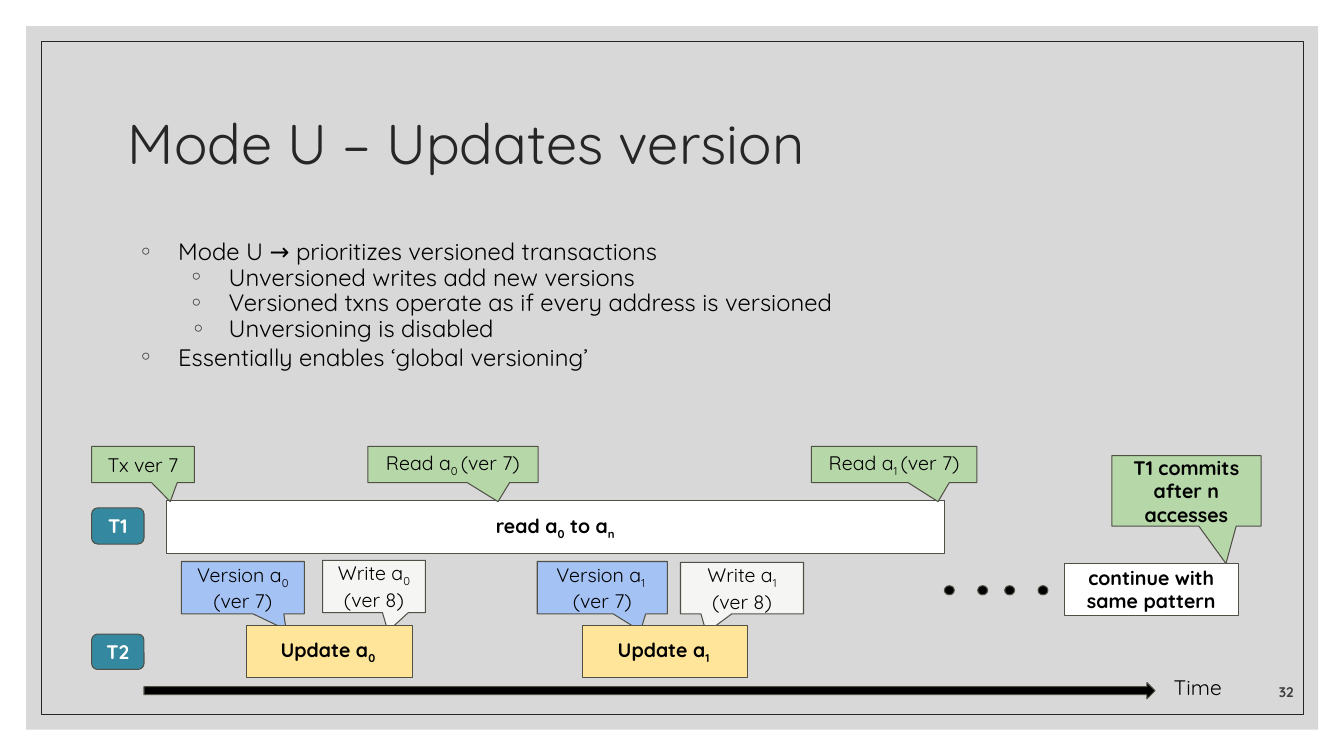
"""Build the Mode U slide: a versioned transaction timeline under a short list."""
from dataclasses import dataclass
from typing import Optional

from lxml.etree import SubElement
from pptx import Presentation
from pptx.dml.color import RGBColor
from pptx.enum.shapes import MSO_SHAPE
from pptx.enum.text import MSO_ANCHOR, MSO_AUTO_SIZE, PP_ALIGN
from pptx.oxml.ns import qn
from pptx.util import Cm, Pt

FONT = "Quicksand"
INK, OUTLINE, BLACK, WHITE = "262626", "505046", "000000", "FFFFFF"
GREEN, BLUE, PALE, YELLOW, TEAL = "B6D7A8", "A4C2F4", "F5F6F4", "FFE599", "3488A0"
RECT, CALLOUT, ROUNDED = MSO_SHAPE.RECTANGLE, MSO_SHAPE.RECTANGULAR_CALLOUT, MSO_SHAPE.ROUNDED_RECTANGLE
DOWN_RIGHT = (0.265, 1.029)


@dataclass(frozen=True)
class Block:
    kind: MSO_SHAPE
    box: tuple[float, float, float, float]
    fill: Optional[str] = None
    text: str = ""
    bold: bool = False
    color: str = BLACK
    adjust: tuple[float, ...] = ()
    line: Optional[str] = OUTLINE


@dataclass(frozen=True)
class Point:
    text: str
    level: int = 0
    hanging: float = 0.99
    before: float = 0


FRAME = [
    Block(RECT, (0.66, 0.66, 32.56, 17.73), "BFBFBF", line=None),
    Block(RECT, (1.04, 1.04, 31.8, 16.97), line=INK),
]
POINTS = [
    Point("Mode U → prioritizes versioned transactions", before=9),
    Point("Unversioned writes add new versions", 1),
    Point("Versioned txns operate as if every address is versioned", 1),
    Point("Unversioning is disabled", 1, 0.94),
    Point("Essentially enables ‘global versioning’"),
]
TIMELINE = [
    Block(RECT, (4.19, 12.62, 19.61, 1.32), WHITE, "read a~0~ to a~n~", True),
    Block(MSO_SHAPE.RIGHT_ARROW, (3.63, 17.2, 25.48, 0.41), BLACK, adjust=(0.5, 0.5)),
    Block(ROUNDED, (2.31, 12.8, 1.32, 0.91), TEAL, "T1", True, WHITE),
    Block(ROUNDED, (2.31, 15.98, 1.32, 0.89), TEAL, "T2", True, WHITE),
    Block(CALLOUT, (9.27, 11.25, 4.29, 0.91), GREEN, "Read a~0 ~(ver 7)", adjust=DOWN_RIGHT),
    Block(CALLOUT, (8.13, 14.12, 2.59, 1.32), PALE, "Write a~0 ~(ver 8)", adjust=(0.136, 0.855)),
    Block(CALLOUT, (17.15, 14.17, 3.1, 1.3), PALE, "Write a~1~\n(ver 8)", adjust=(-0.29, 0.865)),
    Block(CALLOUT, (20.45, 11.25, 4.17, 0.91), GREEN, "Read a~1 ~(ver 7)", adjust=DOWN_RIGHT),
    Block(CALLOUT, (13.54, 14.15, 3.28, 1.32), BLUE, "Version a~1 ~\n(ver 7)", adjust=(0.293, 0.823)),
    Block(CALLOUT, (4.57, 14.15, 3.1, 1.32), BLUE, "Version a~0 ~(ver 7)", adjust=(0.352, 0.801)),
    *(Block(MSO_SHAPE.OVAL, (left, 14.76, 0.25, 0.23), BLACK) for left in (23.8, 24.64, 25.32, 26.16)),
    Block(RECT, (26.82, 14.2, 4.39, 1.3), WHITE, "continue with same pattern", True),
    Block(CALLOUT, (28.02, 11.48, 3.76, 1.78), GREEN, "T1 commits after n accesses", True, adjust=DOWN_RIGHT),
    Block(RECT, (6.22, 15.77, 4.17, 1.3), YELLOW, "Update a~0 ~", True),
    Block(RECT, (14.68, 15.77, 4.17, 1.3), YELLOW, "Update a~1 ~", True),
    Block(CALLOUT, (2.31, 11.25, 2.59, 0.91), GREEN, "Tx ver 7", adjust=DOWN_RIGHT),
]


def rgb(value: str) -> RGBColor:
    """Turn a hex string into a colour."""
    return RGBColor.from_string(value)


def place(shape, box: tuple[float, float, float, float]) -> None:
    """Move and size a shape, in centimetres."""
    shape.left, shape.top, shape.width, shape.height = map(Cm, box)


def write(shape, text: str, *, size: float = 14, color: str = BLACK, bold: bool = False,
          align=PP_ALIGN.CENTER, anchor=MSO_ANCHOR.MIDDLE, inset: float = 0.25,
          spacing: Optional[float] = None) -> None:
    """Write formatted text, one paragraph a line, with subscripts between tildes."""
    frame = shape.text_frame
    frame.word_wrap = True
    frame.auto_size = MSO_AUTO_SIZE.NONE
    frame.vertical_anchor = anchor
    frame.margin_left = frame.margin_right = Cm(0.25)
    frame.margin_top = frame.margin_bottom = Cm(inset)
    for index, content in enumerate(text.split("\n")):
        paragraph = frame.add_paragraph() if index else frame.paragraphs[0]
        paragraph.alignment = align
        paragraph.line_spacing = spacing
        for part, piece in enumerate(content.split("~")):
            if not piece:
                continue
            run = paragraph.add_run()
            run.text = piece
            font = run.font
            font.name, font.size, font.bold = FONT, Pt(size), bold
            font.color.rgb = rgb(color)
            if part % 2:
                run._r.get_or_add_rPr().set("baseline", "-25000")


def draw(slide, block: Block):
    """Draw one block with its text."""
    shape = slide.shapes.add_shape(block.kind, *map(Cm, block.box))
    shape.shadow.inherit = False
    for index, value in enumerate(block.adjust):
        shape.adjustments[index] = value
    if block.fill:
        shape.fill.solid()
        shape.fill.fore_color.rgb = rgb(block.fill)
    else:
        shape.fill.background()
    if block.line:
        shape.line.color.rgb = rgb(block.line)
        shape.line.width = Pt(0.75)
    else:
        shape.line.fill.background()
    if block.text:
        write(shape, block.text, bold=block.bold, color=block.color)
    return shape


def draw_frame(slide) -> None:
    """Put the translucent backdrop and its border behind the title."""
    backdrop, border = [draw(slide, block) for block in FRAME]
    tint = backdrop.element.spPr.find(qn("a:solidFill")).find(qn("a:srgbClr"))
    SubElement(tint, qn("a:alpha")).set("val", "60000")
    for layer in (backdrop, border):
        slide.shapes.title.element.addprevious(layer.element)


def add_points(body) -> None:
    """Fill the body with its two-level bulleted list."""
    place(body, (2.97, 5.84, 27.94, 4.22))
    write(body, "\n".join(point.text for point in POINTS), size=17,
          align=PP_ALIGN.LEFT, anchor=MSO_ANCHOR.TOP, inset=0.13)
    for paragraph, point in zip(body.text_frame.paragraphs, POINTS):
        paragraph.level = point.level
        paragraph.line_spacing = 0.9 if point.level else 1.0
        paragraph.space_before = Pt(point.before)
        properties = paragraph._p.get_or_add_pPr()
        properties.set("marL", str(Cm(1.27 * (point.level + 1))))
        properties.set("indent", str(-Cm(point.hanging)))
        bullet_color = SubElement(properties, qn("a:buClr"))
        SubElement(bullet_color, qn("a:srgbClr")).set("val", INK)
        SubElement(properties, qn("a:buFont")).set("typeface", FONT)
        SubElement(properties, qn("a:buChar")).set("char", "◦")


def add_label(slide, box: tuple[float, float, float, float], text: str, **style) -> None:
    """Add a free-standing text label."""
    write(slide.shapes.add_textbox(*map(Cm, box)), text, **style)


def main() -> None:
    """Build and save the slide."""
    deck = Presentation()
    deck.slide_width, deck.slide_height = Cm(33.87), Cm(19.05)
    slide = deck.slides.add_slide(deck.slide_layouts[1])
    draw_frame(slide)
    title = slide.shapes.title
    place(title, (2.97, 1.78, 27.94, 3.81))
    write(title, "Mode U – Updates version", size=40, color=INK,
          align=PP_ALIGN.LEFT, inset=0.13, spacing=0.9)
    add_points(slide.placeholders[1])
    add_label(slide, (30.51, 16.76, 2.34, 1.02), "32", size=10, color="3F3F3F", bold=True,
              align=PP_ALIGN.RIGHT, anchor=MSO_ANCHOR.BOTTOM, inset=0.13)
    add_label(slide, (29.13, 16.76, 2.11, 1.17), "Time", size=15, anchor=MSO_ANCHOR.TOP)
    for block in TIMELINE:
        draw(slide, block)
    deck.save("out.pptx")


if __name__ == "__main__":
    main()
